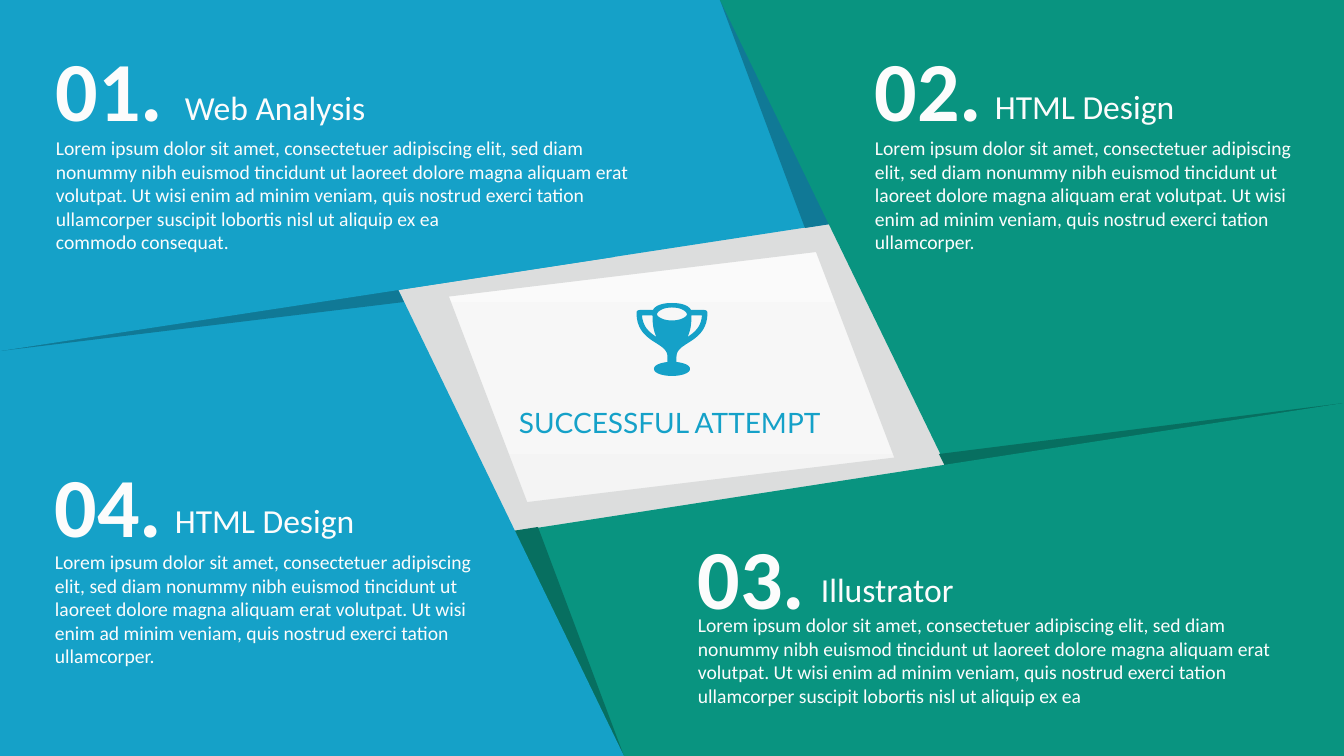
import pptx
import pptx.dml.color
import pptx.enum.text
import pptx.util

WIDTH, HEIGHT = 1344, 756
SCALE = 12192000 / WIDTH

BLUE, DARK_BLUE = "15A1C8", "107996"
GREEN, DARK_GREEN = "099480", "076F60"
GREY, WHITE, PALE = "DCDDDD", "FCFCFC", "F2F2F2"

LOREM = ("Lorem ipsum dolor sit amet, consectetuer adipiscing elit, sed diam "
         "nonummy nibh euismod tincidunt ut laoreet dolore magna aliquam erat "
         "volutpat. Ut wisi enim ad minim veniam, quis nostrud exerci tation "
         "ullamcorper")
LONG_LOREM = LOREM + " suscipit lobortis nisl ut aliquip ex ea"
SHORT_LOREM = LOREM + "."

TOP_LEFT, TOP_RIGHT = (0, 0), (WIDTH, 0)
BOTTOM_LEFT, BOTTOM_RIGHT = (0, HEIGHT), (WIDTH, HEIGHT)

# Panels from back to front: grey frame, then coloured panels and their folds
PANELS = [
    (GREY, [BOTTOM_LEFT, (0, 566), (WIDTH, 403), BOTTOM_RIGHT]),
    (GREY, [BOTTOM_RIGHT, (1008, HEIGHT), (720, 0), TOP_RIGHT]),
    (GREY, [TOP_RIGHT, (WIDTH, 188), (0, 351), TOP_LEFT]),
    (GREY, [TOP_LEFT, (336, 0), (624, HEIGHT), BOTTOM_LEFT]),
    (BLUE, [TOP_RIGHT, (WIDTH, 145), (0, 351), TOP_LEFT]),
    (DARK_BLUE, [TOP_RIGHT, (WIDTH, 145), (805, 228), (720, 0)]),
    (GREEN, [BOTTOM_RIGHT, (1087, HEIGHT), (720, 0), TOP_RIGHT]),
    (DARK_GREEN, [BOTTOM_RIGHT, (1087, HEIGHT), (939, 454), (WIDTH, 403)]),
    (GREEN, [BOTTOM_LEFT, (0, 611), (WIDTH, 403), BOTTOM_RIGHT]),
    (DARK_GREEN, [BOTTOM_LEFT, (0, 611), (538, 527), (624, HEIGHT)]),
    (BLUE, [TOP_LEFT, (258, 0), (624, HEIGHT), BOTTOM_LEFT]),
    (DARK_BLUE, [TOP_LEFT, (258, 0), (404, 302), (0, 351)]),
    (BLUE, [TOP_LEFT, (614, 0), (614, 257), (0, 351)]),
]

# Number, box (left, top, width), title, title box (dx, dy, width), body dy, body height, paragraphs
SECTIONS = [
    ("01.", (46, 33, 626), "Web Analysis", (129, 49, 211), 98, 129,
     [LONG_LOREM, "commodo consequat."]),
    ("02.", (865, 33, 457), "HTML Design", (120, 48, 210), 98, 129, [SHORT_LOREM]),
    ("03.", (688, 521, 621), "Illustrator", (123, 43, 154), 87, 105, [LONG_LOREM]),
    ("04.", (45, 449, 457), "HTML Design", (120, 46, 210), 96, 129, [SHORT_LOREM]),
]


def px(length):
    return pptx.util.Emu(round(length * SCALE))


def color(hex_string):
    return pptx.dml.color.RGBColor.from_string(hex_string)


def add_outline(slide, contours, fill):
    """Filled freeform; contours after the first are holes."""
    scaled = [[(px(x), px(y)) for x, y in contour] for contour in contours]
    builder = slide.shapes.build_freeform(*scaled[0][0], scale=1.0)
    builder.add_line_segments(scaled[0][1:], close=True)
    for hole in scaled[1:]:
        builder.move_to(*hole[0])
        builder.add_line_segments(hole[1:], close=True)
    outline = builder.convert_to_shape()
    outline.shadow.inherit = False
    outline.fill.solid()
    outline.fill.fore_color.rgb = color(fill)
    outline.line.fill.background()


def add_text(slide, box, paragraphs, size, ink=WHITE, font="Calibri", bold=False, wrap=False):
    frame = slide.shapes.add_textbox(*map(px, box)).text_frame
    frame.word_wrap = wrap
    frame.auto_size = pptx.enum.text.MSO_AUTO_SIZE.SHAPE_TO_FIT_TEXT
    frame.text = "\n".join(paragraphs)
    for paragraph in frame.paragraphs:
        for run in paragraph.runs:
            run.font.name = font
            run.font.size = pptx.util.Pt(size)
            run.font.bold = bold
            run.font.color.rgb = color(ink)


def curve(start, control_1, control_2, end, steps=10):
    """Points of a cubic curve, both ends included."""
    points = []
    for step in range(steps + 1):
        t = step / steps
        weights = ((1 - t) ** 3, 3 * t * (1 - t) ** 2, 3 * t ** 2 * (1 - t), t ** 3)
        corners = (start, control_1, control_2, end)
        points.append(tuple(sum(w * corner[axis] for w, corner in zip(weights, corners))
                            for axis in (0, 1)))
    return points


def mirror(points):
    return [(-x, y) for x, y in reversed(points)]


def add_background(slide):
    fill = slide.background.fill
    fill.gradient()
    fill.gradient_angle = 90
    for stop, hex_string, position in zip(fill.gradient_stops, (PALE, WHITE), (0, 1)):
        stop.color.rgb = color(hex_string)
        stop.position = position


def add_trophy(slide, center, top):
    # Right half, measured from the top of the vertical axis
    half_cup = (curve((0, 73), (10, 73), (18, 70), (18, 66))
                + curve((18, 66), (18, 62), (12, 60), (4.5, 59))
                + curve((4.5, 54), (4.5, 48), (8, 45), (16, 40))
                + curve((16, 40), (24, 35), (35.5, 28), (35.5, 10))
                + curve((35.5, 10), (35.5, 8), (34, 7), (32, 7))
                + curve((19, 7), (17, 3), (11, 0), (0, 0)))
    half_rim = (curve((0, 17.5), (10, 17.5), (15, 13), (15, 11.5))
                + curve((15, 11.5), (15, 9), (10, 4.5), (0, 4.5)))
    handle = (curve((15.5, 34), (18, 29), (19.5, 23), (19.5, 12.5))
              + curve((30, 12.5), (29, 24), (23, 29), (15.5, 34)))
    contours = [half_cup + mirror(half_cup), half_rim + mirror(half_rim),
                handle, mirror(handle)]
    add_outline(slide, [[(center + x, top + y) for x, y in contour]
                        for contour in contours], BLUE)


def add_emblem(slide, left, top, width):
    add_trophy(slide, left + width / 2, top)
    add_text(slide, (left, top + 98, width, 44), ["SUCCESSFUL ATTEMPT"], 20, BLUE, "Lato")


def add_section(slide, number, box, title, title_box, body_dy, body_height, body):
    left, top, width = box
    title_dx, title_dy, title_width = title_box
    add_text(slide, (left, top, 129, 112), [number], 60, bold=True)
    add_text(slide, (left + title_dx, top + title_dy, title_width, 50), [title], 24)
    add_text(slide, (left, top + body_dy, width, body_height), body, 14, wrap=True)


def main():
    deck = pptx.Presentation()
    deck.slide_width, deck.slide_height = px(WIDTH), px(HEIGHT)
    slide = deck.slides.add_slide(deck.slide_layouts[6])
    add_background(slide)
    for fill, corners in PANELS:
        add_outline(slide, [corners], fill)
    add_emblem(slide, 509, 303, 326)
    for section in SECTIONS:
        add_section(slide, *section)
    deck.save("out.pptx")


if __name__ == "__main__":
    main()
